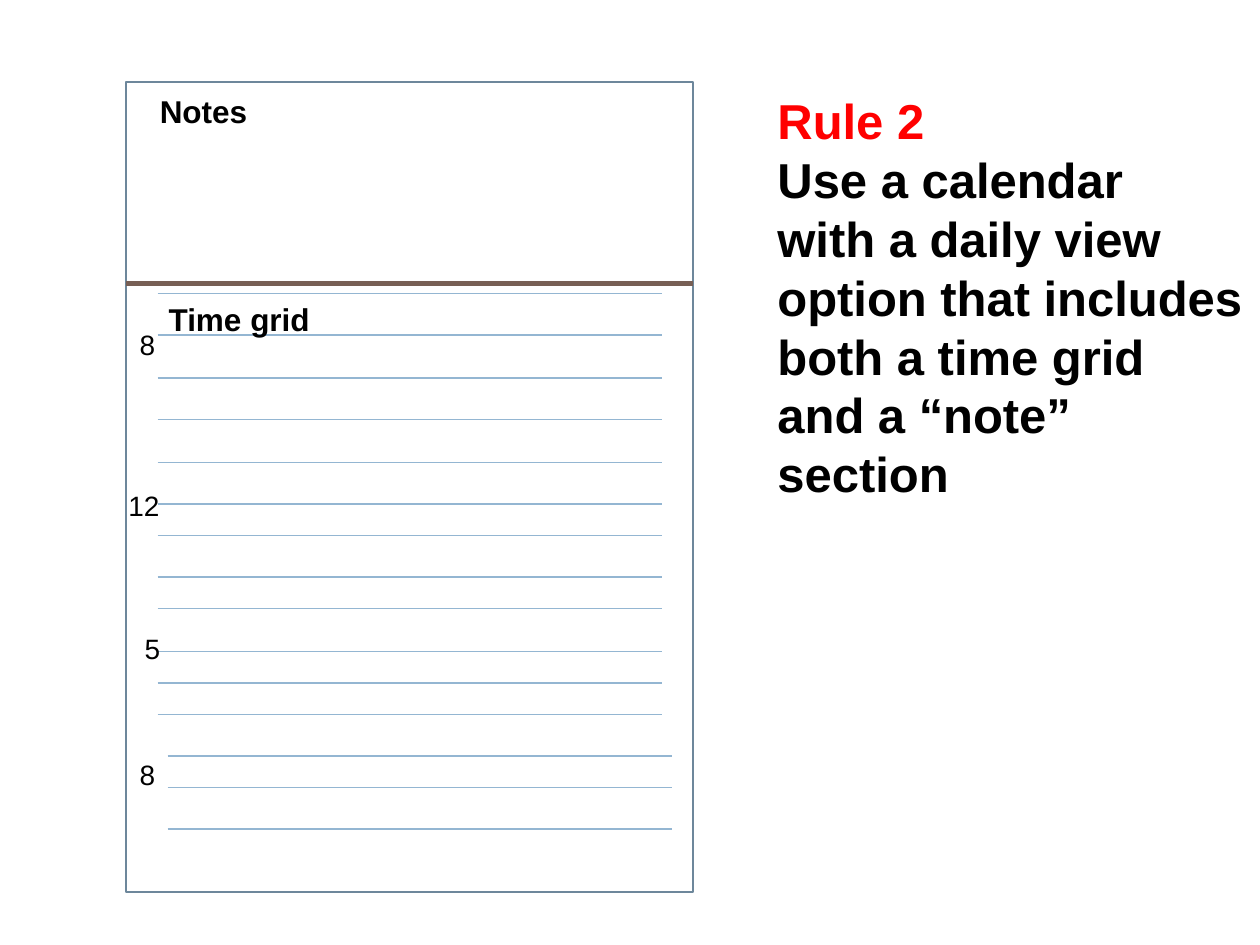
"""Build a slide that shows a daily calendar page beside its rule."""
from dataclasses import dataclass

from lxml import etree
from pptx import Presentation
from pptx.dml.color import RGBColor
from pptx.enum.shapes import MSO_CONNECTOR, MSO_SHAPE
from pptx.enum.text import MSO_ANCHOR, MSO_AUTO_SIZE, PP_ALIGN
from pptx.oxml.ns import qn
from pptx.slide import Slide
from pptx.text.text import TextFrame
from pptx.util import Emu, Pt

STRAIGHT = MSO_CONNECTOR.STRAIGHT
RECT = MSO_SHAPE.RECTANGLE
TOP = MSO_ANCHOR.TOP
GROW = MSO_AUTO_SIZE.SHAPE_TO_FIT_TEXT
LEFT = PP_ALIGN.LEFT

BLACK = RGBColor(0x00, 0x00, 0x00)
RED = RGBColor(0xFF, 0x00, 0x00)
SLATE = RGBColor(0x6D, 0x87, 0x9B)
BROWN = RGBColor(0x77, 0x5F, 0x55)
BLUE = RGBColor(0x94, 0xB6, 0xD2)

FONT = "Arial"
SCALE = 9144
TITLE_ONLY = 5
ROW_WIDTH = 400
ROWS = {
    125: (233, 266, 300, 333, 367, 400, 425, 458, 483, 517, 542, 567),
    133: (600, 625, 658),
}
RULE = (
    "Rule 2",
    "Use a calendar",
    "with a daily view option that includes both a time grid",
    "and a “note” section",
)


@dataclass(frozen=True)
class Label:
    """Text at a place on the page, with its size in px and points."""
    text: str
    left: int
    top: int
    width: int
    height: int
    size: int = 16
    bold: bool = False


LABELS = (
    Label("8", 101, 255, 33, 37),
    Label("5", 105, 496, 33, 37),
    Label("12", 92, 383, 45, 37),
    Label("8", 101, 596, 33, 37),
    Label("Time grid", 124, 233, 133, 40, 18, True),
    Label("Notes", 117, 68, 90, 40, 18, True),
)


def px(count: int) -> Emu:
    """Turn px into EMU."""
    return Emu(count * SCALE)


def write(frame: TextFrame, lines: tuple[str, ...], size: int, bold: bool) -> None:
    """Fill a text frame with left-aligned black lines."""
    frame.text = "\n".join(lines)
    frame.auto_size = GROW
    frame.vertical_anchor = TOP
    for line in frame.paragraphs:
        line.alignment = LEFT
        line.font.name = FONT
        line.font.size = Pt(size)
        line.font.bold = bold
        line.font.color.rgb = BLACK


def draw_rule(slide: Slide) -> None:
    """Set the rule in the title, with its number in red."""
    title = slide.shapes.title
    title.left, title.top = px(607), px(67)
    title.width, title.height = px(393), px(340)
    write(title.text_frame, RULE, 28, True)
    title.text_frame.word_wrap = True
    title.text_frame.paragraphs[0].font.color.rgb = RED


def draw_page(slide: Slide) -> None:
    """Draw the outline of the calendar page."""
    page = slide.shapes.add_shape(RECT, px(100), px(65), px(450), px(643))
    page.shadow.inherit = False
    page.fill.background()
    page.line.color.rgb = SLATE
    page.line.width = Pt(1.5)


def draw_line(slide: Slide, left: int, top: int, width: int,
              color: RGBColor, weight: float) -> None:
    """Draw a level line without a shadow."""
    line = slide.shapes.add_connector(
        STRAIGHT, px(left), px(top), px(left + width), px(top))
    line.line.color.rgb = color
    line.line.width = Pt(weight)
    etree.SubElement(line._element.spPr, qn("a:effectLst"))


def draw_label(slide: Slide, label: Label) -> None:
    """Draw a label that does not wrap."""
    box = slide.shapes.add_textbox(
        px(label.left), px(label.top), px(label.width), px(label.height))
    write(box.text_frame, (label.text,), label.size, label.bold)
    box.text_frame.word_wrap = False


def main() -> None:
    """Build and save the slide."""
    deck = Presentation()
    deck.slide_width, deck.slide_height = px(1000), px(750)
    slide = deck.slides.add_slide(deck.slide_layouts[TITLE_ONLY])
    draw_rule(slide)
    draw_page(slide)
    draw_line(slide, 100, 225, 450, BROWN, 3)
    for left, tops in ROWS.items():
        for top in tops:
            draw_line(slide, left, top, ROW_WIDTH, BLUE, 0.79)
    for label in LABELS:
        draw_label(slide, label)
    deck.save("out.pptx")


if __name__ == "__main__":
    main()
